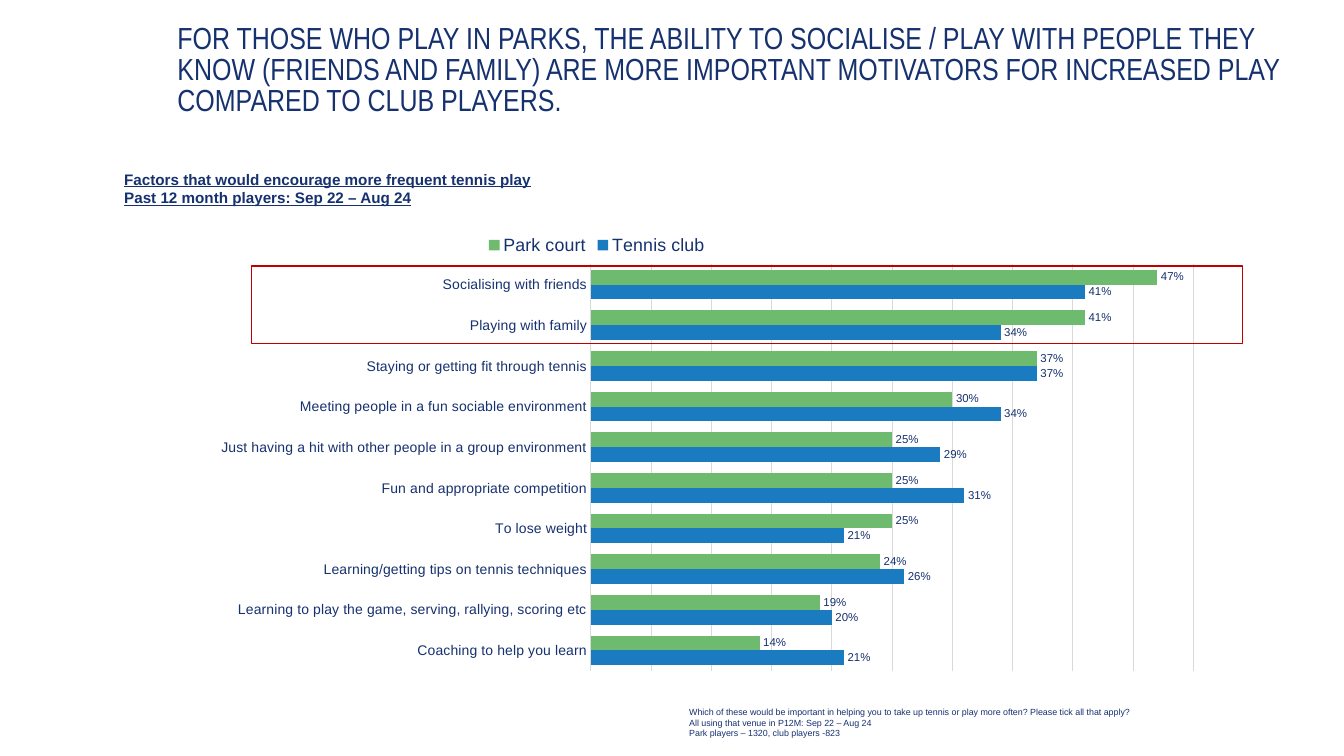
from lxml import etree
from pptx import Presentation
from pptx.chart import data
from pptx.dml import color
from pptx.enum import chart as kinds, shapes, text
from pptx.oxml import ns
from pptx.util import Pt

NAVY, GRID = "16316F", "D9D9D9"


def rgb(code):
    return color.RGBColor.from_string(code)


def style(font, size, name="Arial"):
    font.size = Pt(size)
    font.name = name
    font.color.rgb = rgb(NAVY)


deck = Presentation()
deck.slide_width, deck.slide_height = Pt(1058.4), Pt(595.44)
page = deck.slides.add_slide(deck.slide_layouts[5])

# Title
title = page.shapes.title
title.left, title.top, title.width, title.height = Pt(139.7), Pt(19.4), Pt(897.8), Pt(74.2)
frame = title.text_frame
frame.margin_left = frame.margin_top = frame.margin_right = frame.margin_bottom = 0
frame.auto_size = text.MSO_AUTO_SIZE.NONE
frame.vertical_anchor = text.MSO_ANCHOR.TOP
frame.text = (
    "FOR THOSE WHO PLAY IN PARKS, THE ABILITY TO SOCIALISE / PLAY WITH PEOPLE THEY KNOW "
    "(FRIENDS AND FAMILY) ARE MORE IMPORTANT MOTIVATORS FOR INCREASED PLAY COMPARED TO CLUB PLAYERS."
)
para = frame.paragraphs[0]
para.alignment = text.PP_ALIGN.LEFT
para.line_spacing = 0.85
style(para.font, 24, "Arial Narrow")

# Chart: factor, park court, tennis club, from the bottom bar up
factors = [
    ("Coaching to help you learn", 0.14, 0.21),
    ("Learning to play the game, serving, rallying, scoring etc", 0.19, 0.20),
    ("Learning/getting tips on tennis techniques", 0.24, 0.26),
    ("To lose weight", 0.25, 0.21),
    ("Fun and appropriate competition", 0.25, 0.31),
    ("Just having a hit with other people in a group environment", 0.25, 0.29),
    ("Meeting people in a fun sociable environment", 0.30, 0.34),
    ("Staying or getting fit through tennis", 0.37, 0.37),
    ("Playing with family", 0.41, 0.34),
    ("Socialising with friends", 0.47, 0.41),
]
names, park, club = zip(*factors)
figures = data.CategoryChartData(number_format="0%")
figures.categories = names
figures.add_series("Tennis club", club)
figures.add_series("Park court", park)
chart = page.shapes.add_chart(
    kinds.XL_CHART_TYPE.BAR_CLUSTERED, Pt(0), Pt(177.1), Pt(940.3), Pt(361.4), figures
).chart
chart.has_title = False
style(chart.font, 9)
chart.has_legend = True
chart.legend.position = kinds.XL_LEGEND_POSITION.TOP
chart.legend.include_in_layout = False
style(chart.legend.font, 14)

factor_axis = chart.category_axis
factor_axis.major_tick_mark = kinds.XL_TICK_MARK.NONE
factor_axis.format.line.color.rgb = rgb(GRID)
factor_axis.format.line.width = Pt(0.75)
style(factor_axis.tick_labels.font, 11)

share_axis = chart.value_axis
share_axis.visible = False
share_axis.minimum_scale, share_axis.maximum_scale = 0, 0.5
share_axis.major_unit = 0.05
share_axis.has_major_gridlines = True
share_axis.major_gridlines.format.line.color.rgb = rgb(GRID)
share_axis.major_gridlines.format.line.width = Pt(0.75)

plot = chart.plots[0]
plot.gap_width, plot.overlap = 74, 0
plot.vary_by_categories = False
for series, fill in zip(plot.series, ("1A7BC0", "6EBA6F")):
    series.format.fill.solid()
    series.format.fill.fore_color.rgb = rgb(fill)
    labels = series.data_labels
    labels.show_value = True
    labels.number_format, labels.number_format_is_linked = "0%", False
    labels.position = kinds.XL_LABEL_POSITION.OUTSIDE_END
    style(labels.font, 9)

# Fixed plot area inside the chart
area = chart.element.find(".//" + ns.qn("c:plotArea"))
for old in area.findall(ns.qn("c:layout")):
    area.remove(old)
layout = etree.Element(ns.qn("c:layout"))
area.insert(0, layout)
manual = etree.SubElement(layout, ns.qn("c:manualLayout"))
for tag, value in (
    ("layoutTarget", "inner"), ("xMode", "edge"), ("yMode", "edge"),
    ("x", "0.495"), ("y", "0.086"), ("w", "0.505"), ("h", "0.886"),
):
    etree.SubElement(manual, ns.qn("c:" + tag)).set("val", value)

# Chart heading and survey note
heading = ["Factors that would encourage more frequent tennis play",
           "Past 12 month players: Sep 22 – Aug 24"]
note = ["Which of these would be important in helping you to take up tennis or play more often? "
        "Please tick all that apply?",
        "All using that venue in P12M: Sep 22 – Aug 24",
        "Park players – 1320, club players -823"]
for lines, place, size, strong in (
    (heading, (90.7, 130.3, 419, 36), 12, True),
    (note, (535.7, 553, 379.4, 32.4), 7, False),
):
    box = page.shapes.add_textbox(*map(Pt, place))
    box.text_frame.word_wrap = True
    box.text_frame.text = "\n".join(lines)
    for para in box.text_frame.paragraphs:
        style(para.font, size)
        para.font.bold = para.font.underline = strong

# Frame around the two leading factors
highlight = page.shapes.add_shape(
    shapes.MSO_SHAPE.RECTANGLE, Pt(198), Pt(209.5), Pt(780.5), Pt(61.2)
)
highlight.shadow.inherit = False
highlight.fill.background()
highlight.line.color.rgb = rgb("C00000")
highlight.line.width = Pt(1)

deck.save("out.pptx")
